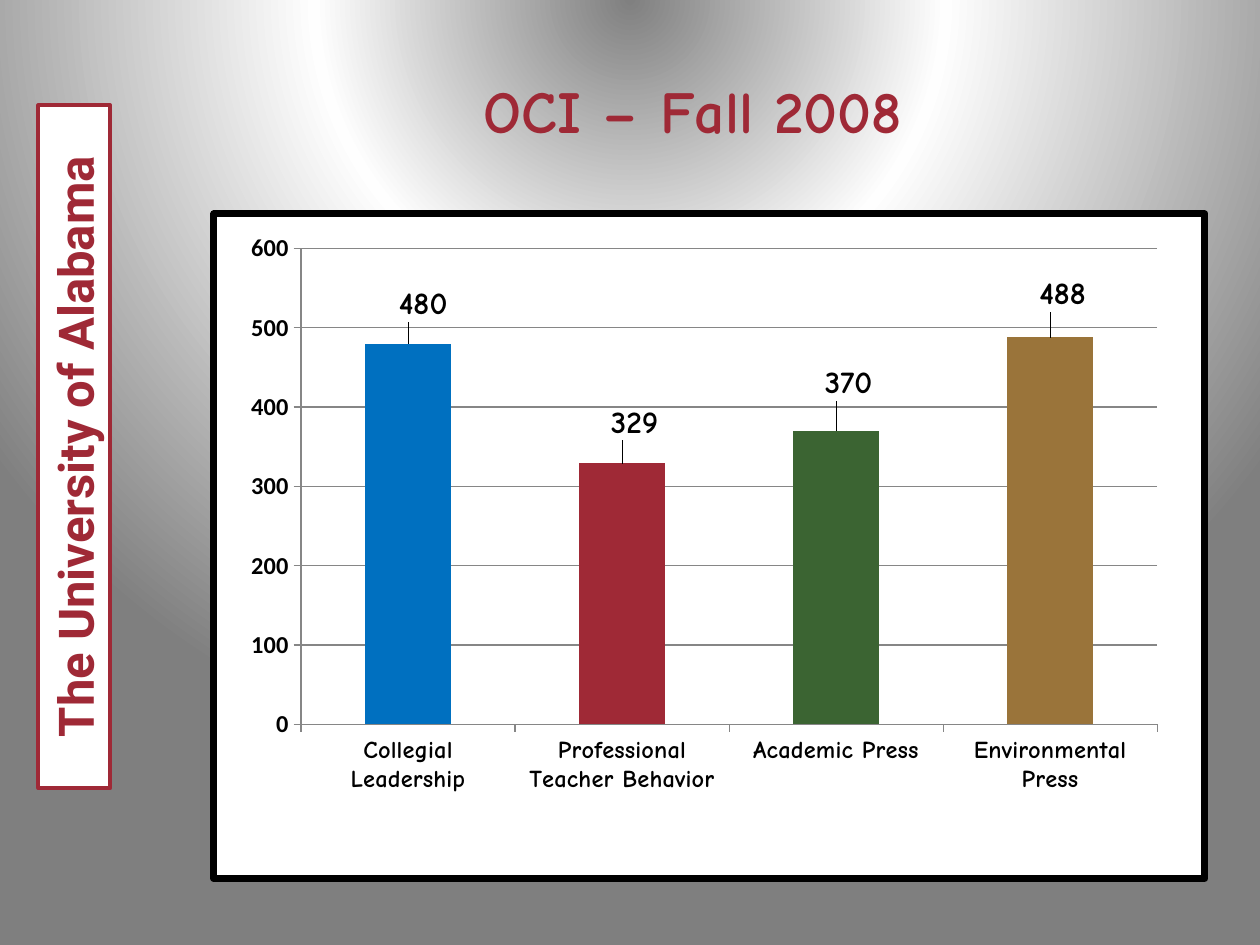
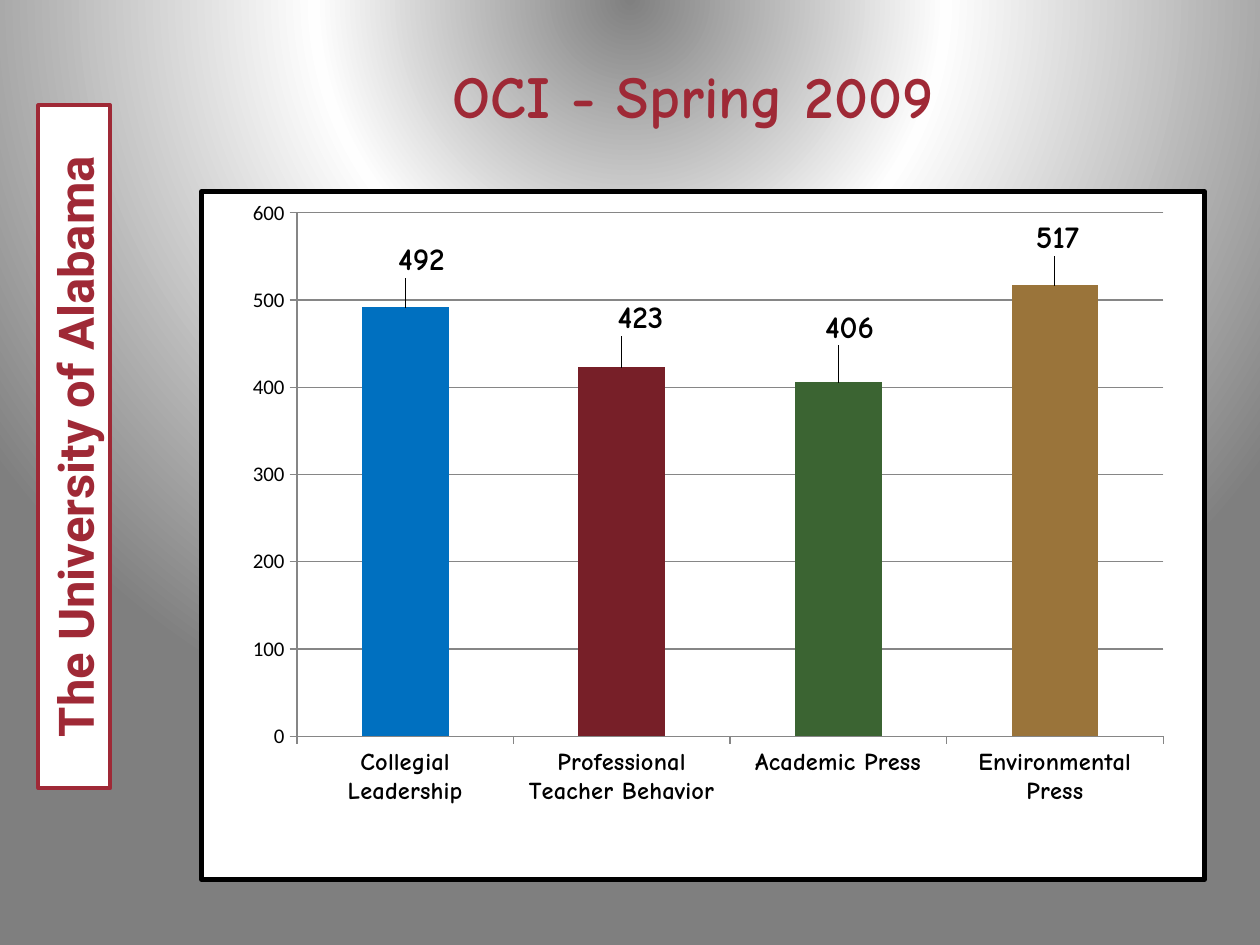
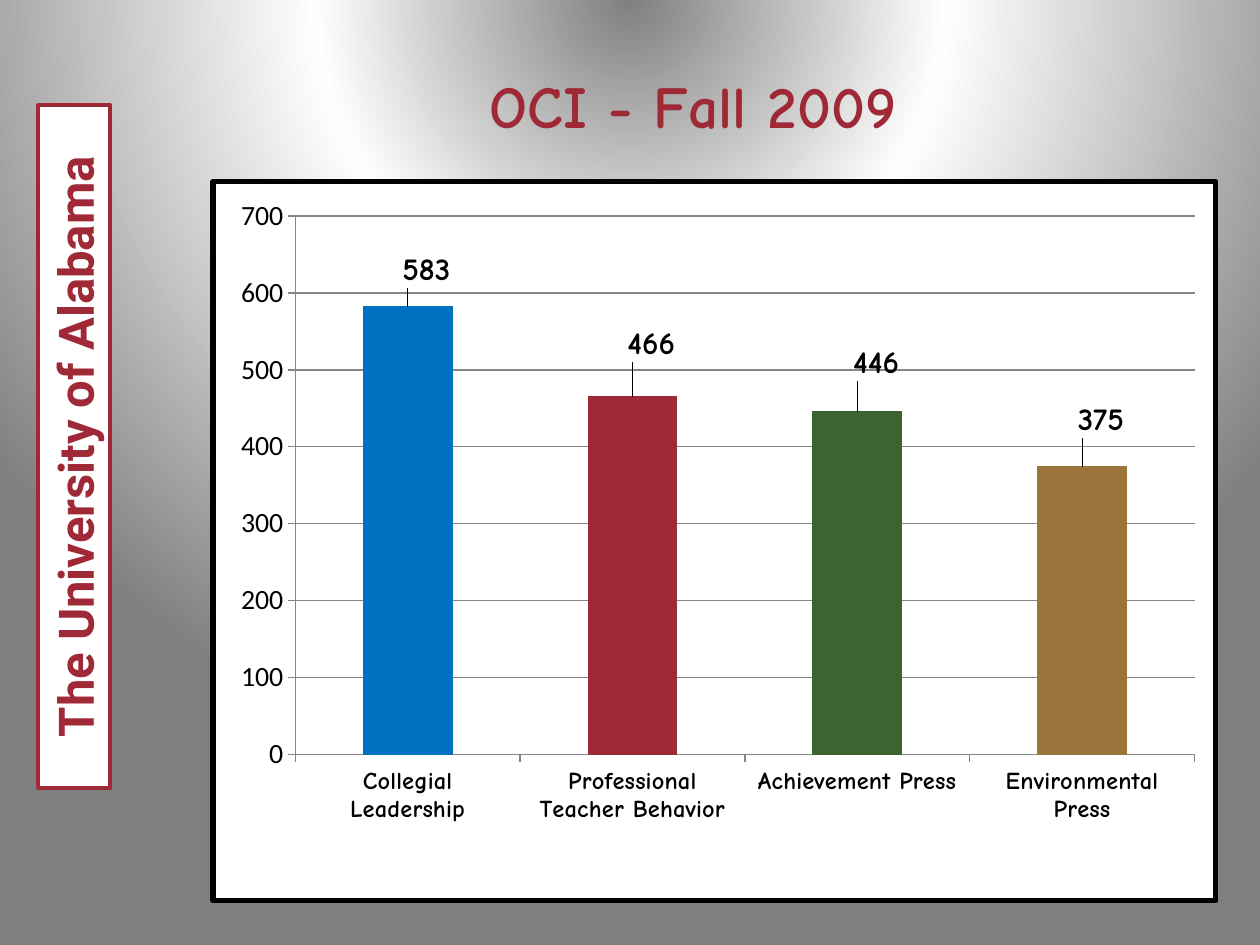
from dataclasses import dataclass

from pptx import Presentation
from pptx.chart.data import CategoryChartData
from pptx.dml.color import RGBColor
from pptx.enum.chart import XL_CHART_TYPE, XL_LABEL_POSITION, XL_TICK_MARK
from pptx.enum.shapes import MSO_SHAPE
from pptx.enum.text import MSO_ANCHOR, PP_ALIGN
from pptx.oxml import parse_xml
from pptx.oxml.ns import nsdecls, qn
from pptx.util import Pt

PX = 9144  # 100 px to the inch


@dataclass(frozen=True)
class Theme:
    crimson = RGBColor.from_string("9F2936")
    white = RGBColor.from_string("FFFFFF")
    black = RGBColor.from_string("000000")
    axis = RGBColor.from_string("868686")
    bars = ("0070C0", "9F2936", "3B6432", "9A743A")
    title_font = "Comic Neue"
    band_font = "Roboto"
    chart_font = "Calibri"
    title_size = Pt(34)
    band_size = Pt(28)
    label_size = Pt(18)
    category_size = Pt(14)


T = Theme()


def set_font(font, name, size, color, bold=True):
    font.name = name
    font.size = size
    font.bold = bold
    font.color.rgb = color


def manual_layout(**values):
    """Chart layout element; keywords come in schema order."""
    items = "".join(f'<c:{k} val="{v}"/>' for k, v in values.items())
    return parse_xml(f'<c:layout {nsdecls("c")}><c:manualLayout>{items}'
                     '</c:manualLayout></c:layout>')


# Box sizes are in px; plot is a share of the chart; shifts move the value labels in px
SLIDES = [
    dict(title="OCI – Fall 2008", title_box=(150, 33, 800, 108),
         chart_box=(167, 167, 792, 533), plot=(0.088, 0.052, 0.864, 0.716),
         third="Academic Press", values=(480, 329, 370, 488), colors=T.bars,
         shifts=((12, -13), (10, -14), (10, -20), (10, -16)),
         top=600, axis_size=14, axis_bold=True, border=4),
    dict(title="OCI - Spring 2009", title_box=(150, 25, 800, 100),
         chart_box=(158, 150, 800, 550), plot=(0.095, 0.031, 0.864, 0.761),
         third="Academic Press", values=(492, 423, 406, 517),
         colors=(T.bars[0], "771F28", *T.bars[2:]),
         shifts=((13, -19), (15, -21), (9, -25), (2, -19)),
         top=600, axis_size=12, axis_bold=False, border=3),
    dict(title="OCI - Fall 2009", title_box=(150, 33, 800, 100),
         chart_box=(167, 142, 800, 575), plot=(0.082, 0.048, 0.897, 0.749),
         third="Achievement Press", values=(583, 466, 446, 375), colors=T.bars,
         shifts=((15, -10), (15, -23), (15, -20), (15, -18)),
         top=700, axis_size=16, axis_bold=False, border=3),
]

prs = Presentation()
prs.slide_width, prs.slide_height = 1000 * PX, 750 * PX

# Shared background: circular gradient centred above the slide
fill = prs.slide_master.background.fill
fill.gradient()
bg = prs.slide_master.element.find(".//" + qn("p:bgPr"))
grad = bg.find(qn("a:gradFill"))
bg.replace(grad, parse_xml(
    f'<a:gradFill {nsdecls("a")} rotWithShape="1"><a:gsLst>'
    '<a:gs pos="0"><a:srgbClr val="808080"/></a:gs>'
    '<a:gs pos="40000"><a:srgbClr val="FEFEFE"/></a:gs>'
    '<a:gs pos="100000"><a:srgbClr val="7F7F7F"/></a:gs></a:gsLst>'
    '<a:path path="circle"><a:fillToRect l="50000" t="-80000" r="50000" b="180000"/>'
    '</a:path></a:gradFill>'))

for spec_row in SLIDES:
    d = spec_row
    s = prs.slides.add_slide(prs.slide_layouts[6])

    # University band, turned to read upwards
    band = s.shapes.add_shape(MSO_SHAPE.RECTANGLE, *(v * PX for v in (-212, 326, 542, 57)))
    band.rotation = 270
    band.shadow.inherit = False
    band.fill.solid()
    band.fill.fore_color.rgb = T.white
    band.line.color.rgb = T.crimson
    band.line.width = Pt(2.25)

    # Title
    title = s.shapes.add_textbox(*(v * PX for v in d["title_box"]))

    for sp, text, name, size in (
            (band, "The University of Alabama", T.band_font, T.band_size),
            (title, d["title"], T.title_font, T.title_size)):
        tf = sp.text_frame
        tf.word_wrap = True
        tf.vertical_anchor = MSO_ANCHOR.MIDDLE
        p = tf.paragraphs[0]
        p.text = text
        p.alignment = PP_ALIGN.CENTER
        set_font(p.font, name, size, T.crimson)

    # Column chart
    data = CategoryChartData()
    data.categories = ["Collegial Leadership", "Professional Teacher Behavior",
                       d["third"], "Environmental Press"]
    data.add_series("Series 1", d["values"])
    chart = s.shapes.add_chart(XL_CHART_TYPE.COLUMN_CLUSTERED,
                               *(v * PX for v in d["chart_box"]), data).chart
    chart.has_title = False
    chart.has_legend = False
    set_font(chart.font, T.chart_font, Pt(10), T.black, False)
    plot = chart.plots[0]
    plot.gap_width = 150
    plot.vary_by_categories = False

    # Axes
    for axis in (chart.category_axis, chart.value_axis):
        axis.major_tick_mark = XL_TICK_MARK.OUTSIDE
        axis.minor_tick_mark = XL_TICK_MARK.NONE
        axis.format.line.color.rgb = T.axis
        axis.format.line.width = Pt(0.75)
    set_font(chart.category_axis.tick_labels.font, T.title_font, T.category_size, T.black)
    axis = chart.value_axis
    set_font(axis.tick_labels.font, T.chart_font, Pt(d["axis_size"]), T.black, d["axis_bold"])
    axis.minimum_scale, axis.maximum_scale, axis.major_unit = 0, d["top"], 100
    axis.has_major_gridlines = True
    axis.major_gridlines.format.line.color.rgb = T.axis
    axis.major_gridlines.format.line.width = Pt(0.75)

    # Bars and value labels
    for i, color in enumerate(d["colors"]):
        point = plot.series[0].points[i]
        point.format.fill.solid()
        point.format.fill.fore_color.rgb = RGBColor.from_string(color)
        set_font(point.data_label.font, T.title_font, T.label_size, T.black)
        point.data_label.position = XL_LABEL_POSITION.OUTSIDE_END
    root = chart.element if hasattr(chart, "element") else chart._chartSpace
    width, height = d["chart_box"][2:]
    for label, (dx, dy) in zip(root.iter(qn("c:dLbl")), d["shifts"]):
        label.find(qn("c:idx")).addnext(
            manual_layout(x=round(dx / width, 4), y=round(dy / height, 4)))

    # Plot position, white ground and black frame
    area = root.find(".//" + qn("c:plotArea"))
    for old in area.findall(qn("c:layout")):
        area.remove(old)
    x, y, w, h = d["plot"]
    area.insert(0, manual_layout(layoutTarget="inner", xMode="edge", yMode="edge",
                                 x=x, y=y, w=w, h=h))
    root.find(qn("c:chart")).addnext(parse_xml(
        f'<c:spPr {nsdecls("c", "a")}><a:solidFill><a:srgbClr val="{T.white}"/></a:solidFill>'
        f'<a:ln w="{Pt(d["border"])}"><a:solidFill><a:srgbClr val="{T.black}"/></a:solidFill>'
        '<a:round/></a:ln></c:spPr>'))

prs.save("out.pptx")
